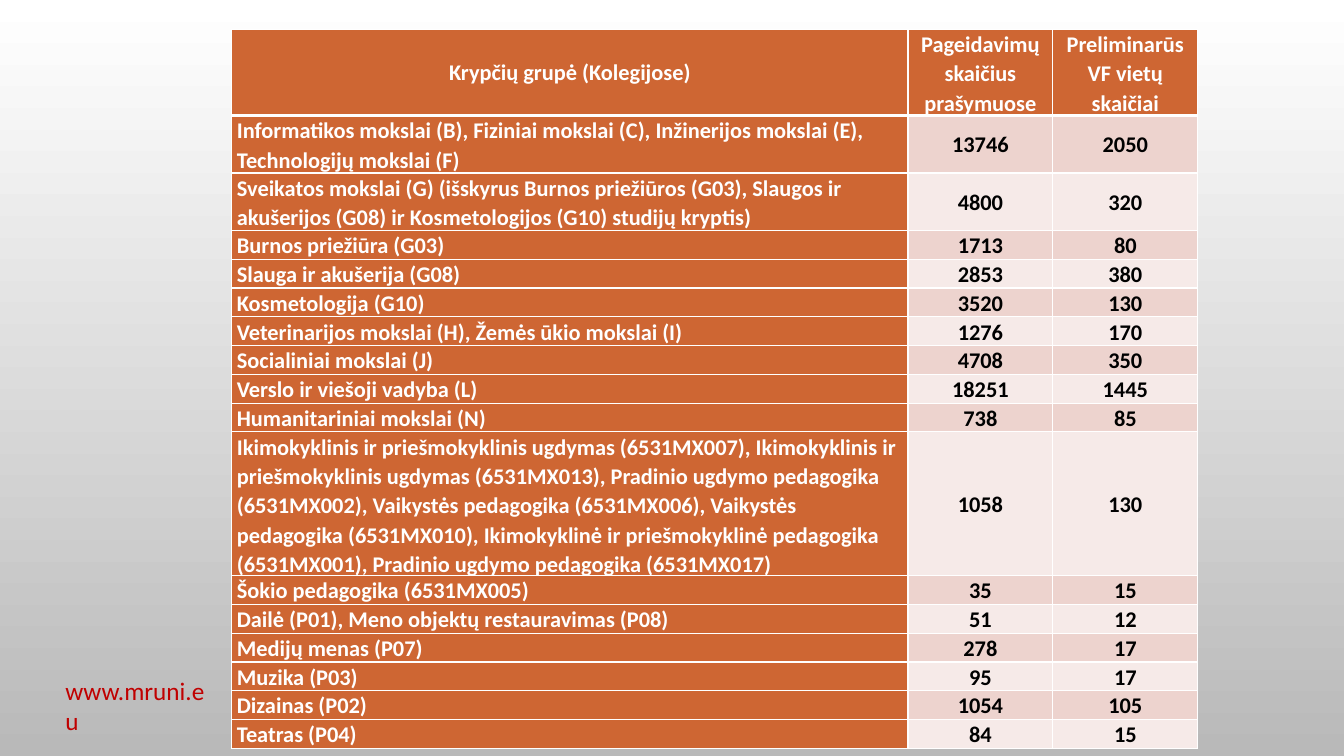
from dataclasses import dataclass

from lxml import etree
from pptx import Presentation
from pptx.dml.color import RGBColor
from pptx.enum.text import MSO_ANCHOR, MSO_AUTO_SIZE, PP_ALIGN
from pptx.oxml.ns import qn
from pptx.util import Inches, Pt

LEFT, CENTER = PP_ALIGN.LEFT, PP_ALIGN.CENTER
TOP, MIDDLE = MSO_ANCHOR.TOP, MSO_ANCHOR.MIDDLE
GROW = MSO_AUTO_SIZE.SHAPE_TO_FIT_TEXT

SLIDE_W, SLIDE_H = Inches(13.33), Inches(7.5)


@dataclass(frozen=True)
class Theme:
    font: str = "Calibri"
    table_size: int = 16
    address_size: int = 18
    white: str = "FFFFFF"
    black: str = "000000"
    sky_end: str = "B9B9B9"
    accent: str = "CE6633"
    bands: tuple = ("EDD3CE", "F6EAE8")
    address: str = "C00000"
    thin: int = 1
    thick: int = 3


THEME = Theme()

# Table geometry: column shares of the width, and text lines per row
TABLE_LEFT, TABLE_TOP = 0.1725, 0.0387
TABLE_W, TABLE_H = 0.7187, 0.9507
COLUMN_SHARES = (0.7, 0.15, 0.15)
HEADER_LINES = 3

HEADER = (
    "Krypčių grupė (Kolegijose)",
    "Pageidavimų skaičius\nprašymuose",
    "Preliminarūs VF vietų skaičiai",
)

# Study field group, requests, places, text lines
GROUPS = (
    ("Informatikos mokslai (B), Fiziniai mokslai (C), Inžinerijos mokslai (E), "
     "Technologijų mokslai (F)", 13746, 2050, 2),
    ("Sveikatos mokslai (G) (išskyrus Burnos priežiūros (G03), Slaugos ir "
     "akušerijos (G08) ir Kosmetologijos (G10) studijų kryptis)", 4800, 320, 2),
    ("Burnos priežiūra (G03)", 1713, 80, 1),
    ("Slauga ir akušerija (G08)", 2853, 380, 1),
    ("Kosmetologija (G10)", 3520, 130, 1),
    ("Veterinarijos mokslai (H), Žemės ūkio mokslai (I)", 1276, 170, 1),
    ("Socialiniai mokslai (J)", 4708, 350, 1),
    ("Verslo ir viešoji vadyba (L)", 18251, 1445, 1),
    ("Humanitariniai mokslai (N)", 738, 85, 1),
    ("Ikimokyklinis ir priešmokyklinis ugdymas (6531MX007), "
     "Ikimokyklinis ir priešmokyklinis ugdymas (6531MX013), "
     "Pradinio ugdymo pedagogika (6531MX002), "
     "Vaikystės pedagogika (6531MX006), Vaikystės pedagogika (6531MX010), "
     "Ikimokyklinė ir priešmokyklinė pedagogika (6531MX001), "
     "Pradinio ugdymo pedagogika (6531MX017)", 1058, 130, 5),
    ("Šokio pedagogika (6531MX005)", 35, 15, 1),
    ("Dailė (P01), Meno objektų restauravimas (P08)", 51, 12, 1),
    ("Medijų menas (P07)", 278, 17, 1),
    ("Muzika (P03)", 95, 17, 1),
    ("Dizainas (P02)", 1054, 105, 1),
    ("Teatras (P04)", 84, 15, 1),
)


def share_x(share):
    return round(SLIDE_W * share)


def share_y(share):
    return round(SLIDE_H * share)


def apply(target, formats):
    for attribute, value in formats.items():
        setattr(target, attribute, value)


def write(frame, text, color, size, bold=False, **paragraph_format):
    """Fill a text frame, one paragraph per line of text."""
    for index, line in enumerate(text.split("\n")):
        paragraph = frame.paragraphs[0] if index == 0 else frame.add_paragraph()
        apply(paragraph, paragraph_format)
        run = paragraph.add_run()
        run.text = line
        apply(run.font, {"name": THEME.font, "size": Pt(size), "bold": bold})
        run.font.color.rgb = RGBColor.from_string(color)


def paint_background(slide):
    fill = slide.background.fill
    fill.gradient()
    fill.gradient_angle = 270
    for stop, color in zip(fill.gradient_stops, (THEME.white, THEME.sky_end)):
        stop.color.rgb = RGBColor.from_string(color)


def add_borders(cell, top, bottom):
    properties = cell._tc.get_or_add_tcPr()
    widths = {"a:lnL": THEME.thin, "a:lnR": THEME.thin, "a:lnT": top, "a:lnB": bottom}
    for side, width in widths.items():
        line = etree.SubElement(properties, qn(side), w=str(Pt(width)))
        solid = etree.SubElement(line, qn("a:solidFill"))
        etree.SubElement(solid, qn("a:srgbClr"), val=THEME.white)


def fill_cell(cell, text, fill, color, align, top, bottom, **paragraph_format):
    apply(cell, {"vertical_anchor": MIDDLE,
                 "margin_left": Inches(0.05), "margin_right": Inches(0.05),
                 "margin_top": 0, "margin_bottom": 0})
    add_borders(cell, top, bottom)
    cell.fill.solid()
    cell.fill.fore_color.rgb = RGBColor.from_string(fill)
    write(cell.text_frame, text, color, THEME.table_size, bold=True,
          alignment=align, line_spacing=1.07, **paragraph_format)


def add_places_table(slide):
    line_counts = [HEADER_LINES] + [group[-1] for group in GROUPS]
    width, height = share_x(TABLE_W), share_y(TABLE_H)
    table = slide.shapes.add_table(
        len(line_counts), len(COLUMN_SHARES),
        share_x(TABLE_LEFT), share_y(TABLE_TOP), width, height).table
    table.horz_banding = False
    for column, share in zip(table.columns, COLUMN_SHARES):
        column.width = round(width * share)
    for row, lines in zip(table.rows, line_counts):
        row.height = round(height * lines / sum(line_counts))

    # Header row
    for column, title in enumerate(HEADER):
        spacing = {"space_after": Pt(8)} if column == 0 else {}
        fill_cell(table.cell(0, column), title, THEME.accent, THEME.white, CENTER,
                  THEME.thin, THEME.thick, **spacing)

    # Study field groups with banded numbers
    for row, (group, requests, places, _) in enumerate(GROUPS, start=1):
        top = THEME.thick if row == 1 else THEME.thin
        band = THEME.bands[(row - 1) % 2]
        fill_cell(table.cell(row, 0), group, THEME.accent, THEME.white, LEFT,
                  top, THEME.thin)
        for column, number in enumerate((requests, places), start=1):
            fill_cell(table.cell(row, column), str(number), band, THEME.black, CENTER,
                      top, THEME.thin)


def add_web_address(slide):
    frame = slide.shapes.add_textbox(
        share_x(0.0413), share_y(0.8867), share_x(0.1185), share_y(0.0533)).text_frame
    apply(frame, {"word_wrap": True, "auto_size": GROW, "vertical_anchor": TOP})
    write(frame, "www.mruni.eu", THEME.address, THEME.address_size)


def main():
    presentation = Presentation()
    apply(presentation, {"slide_width": SLIDE_W, "slide_height": SLIDE_H})
    slide = presentation.slides.add_slide(presentation.slide_layouts[6])
    paint_background(slide)
    add_web_address(slide)
    add_places_table(slide)
    presentation.save("out.pptx")


if __name__ == "__main__":
    main()
